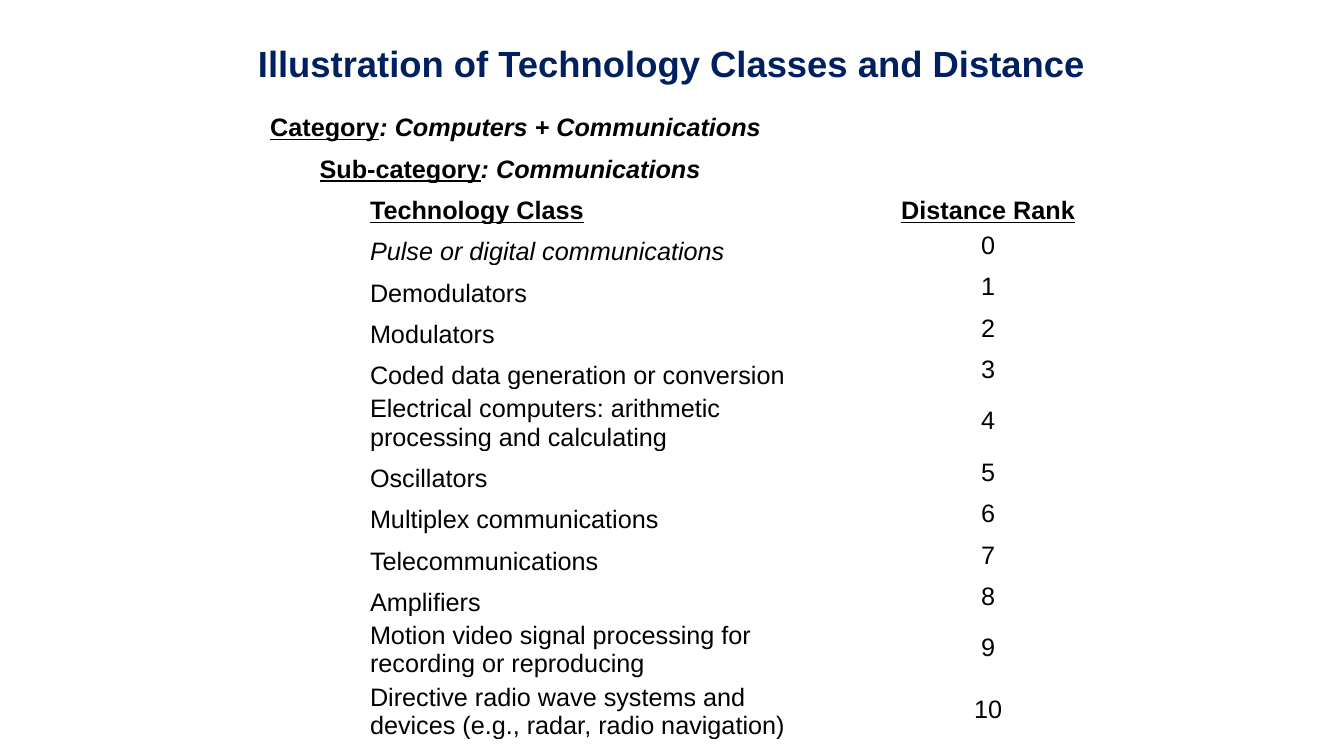
from pptx import Presentation
from pptx.dml.color import RGBColor
from pptx.enum import text
from pptx.util import Inches, Pt

NAVY = RGBColor(0x00, 0x20, 0x60)
BLACK = RGBColor(0x00, 0x00, 0x00)

HEADS = [("Category", ": Computers + Communications"),
         ("Sub-category", ": Communications")]
CLASSES = [
    "Pulse or digital communications",
    "Demodulators",
    "Modulators",
    "Coded data generation or conversion",
    "Electrical computers: arithmetic processing and calculating",
    "Oscillators",
    "Multiplex communications",
    "Telecommunications",
    "Amplifiers",
    "Motion video signal processing for recording or reproducing",
    "Directive radio wave systems and devices (e.g., radar, radio navigation)",
]
ROW = 0.41


def add_run(para, words, size=18, color=BLACK, bold=False, italic=False, under=False):
    run = para.add_run()
    run.text = words
    font = run.font
    font.name, font.size, font.color.rgb = "Arial", Pt(size), color
    font.bold, font.italic, font.underline = bold, italic, under


def set_cell(row, col, left=0.01, right=0.01, anchor=text.MSO_ANCHOR.BOTTOM):
    """Clear the cell's fill, set its margins and return its paragraph."""
    cell = table.cell(row, col)
    cell.fill.background()
    cell.margin_left, cell.margin_right = Inches(left), Inches(right)
    cell.margin_top, cell.margin_bottom = Inches(0.01), 0
    cell.vertical_anchor = anchor
    para = cell.text_frame.paragraphs[0]
    para.alignment = text.PP_ALIGN.CENTER if col else text.PP_ALIGN.LEFT
    return para


prs = Presentation()
prs.slide_width, prs.slide_height = Inches(13.33), Inches(7.5)
slide = prs.slides.add_slide(prs.slide_layouts[6])

title = slide.shapes.add_textbox(0, Inches(0.25), prs.slide_width, Inches(0.75))
frame = title.text_frame
frame.word_wrap = True
frame.vertical_anchor = text.MSO_ANCHOR.MIDDLE
frame.paragraphs[0].alignment = text.PP_ALIGN.CENTER
add_run(frame.paragraphs[0], "Illustration of Technology Classes and Distance",
        size=26, color=NAVY, bold=True)

count = len(HEADS) + 1 + len(CLASSES)
table = slide.shapes.add_table(count, 2, Inches(2.67), Inches(1),
                               Inches(8.59), Inches(ROW * count)).table
table.first_row = table.horz_banding = False
table.columns[0].width, table.columns[1].width = Inches(5.67), Inches(2.92)
for line in table.rows:
    line.height = Inches(ROW)

# Category levels, each indented half an inch further
for row, (label, value) in enumerate(HEADS):
    para = set_cell(row, 0, left=max(0.01, row * 0.5))
    set_cell(row, 1)
    table.cell(row, 0).merge(table.cell(row, 1))
    add_run(para, label, bold=True, under=True)
    add_run(para, value, bold=True, italic=True)

# Column headings
top = len(HEADS)
add_run(set_cell(top, 0, left=1), "Technology Class", bold=True, under=True)
add_run(set_cell(top, 1), "Distance Rank", bold=True, under=True)

# Classes in order of distance; the reference class is in italics
for rank, name in enumerate(CLASSES):
    row = top + 1 + rank
    add_run(set_cell(row, 0, left=1, right=0.1), name, italic=rank == 0)
    add_run(set_cell(row, 1, anchor=text.MSO_ANCHOR.MIDDLE), str(rank))

prs.save("out.pptx")
